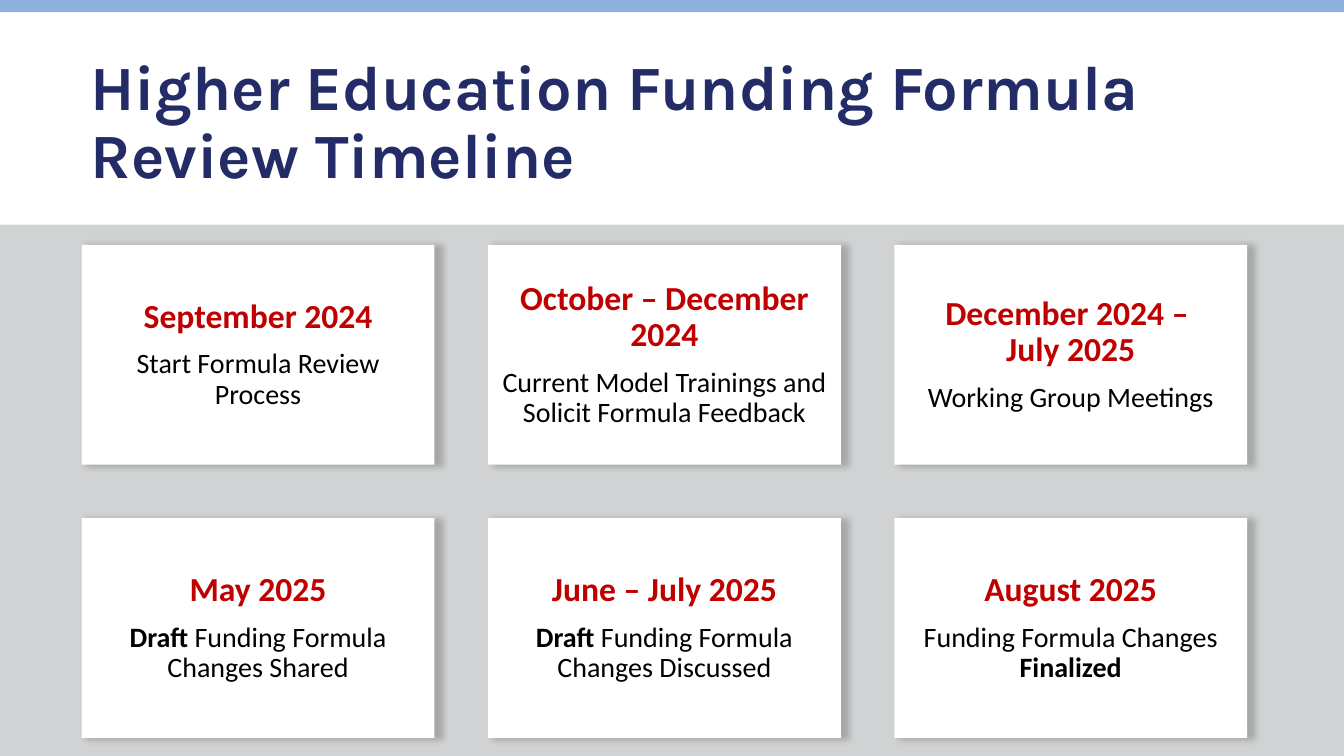
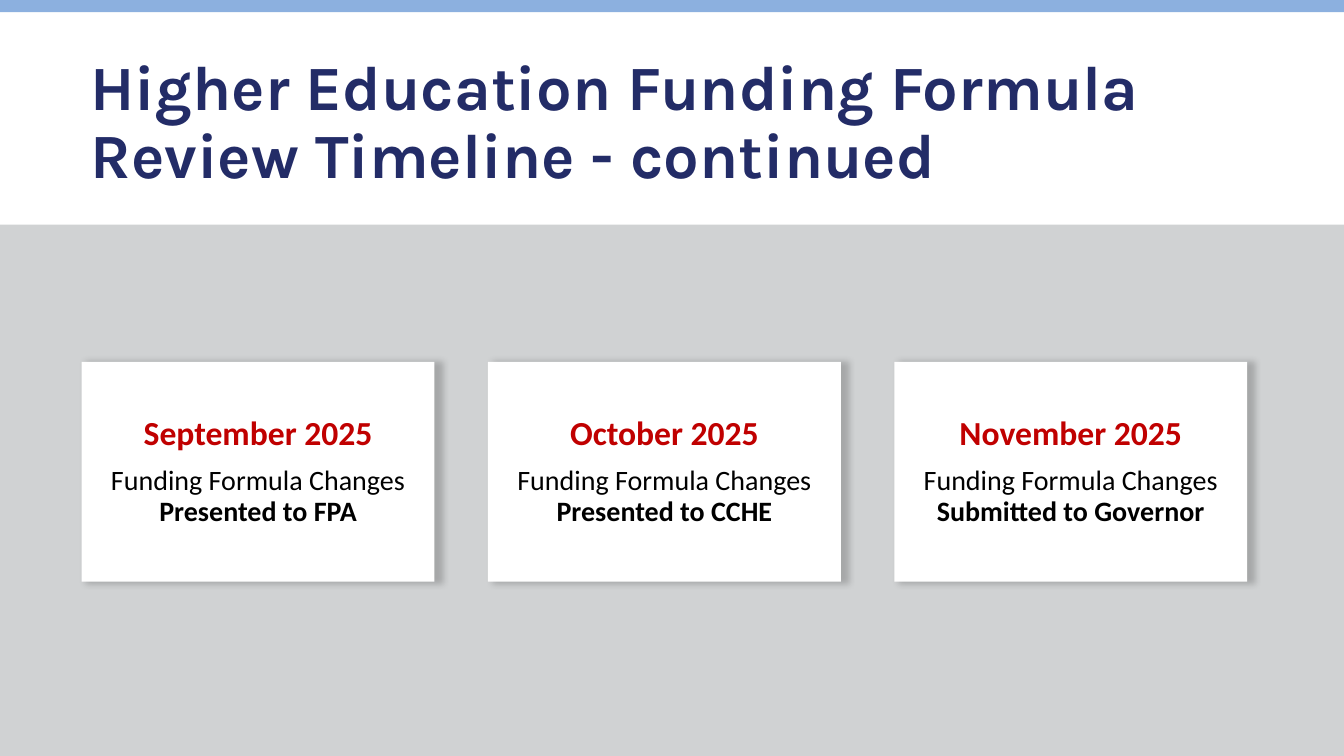
from dataclasses import dataclass

from lxml import etree
from pptx import Presentation
from pptx.dml.color import RGBColor
from pptx.enum.shapes import MSO_SHAPE
from pptx.enum.text import MSO_ANCHOR, PP_ALIGN
from pptx.oxml.ns import qn
from pptx.util import Inches, Pt

TITLE = "Higher Education Funding Formula Review Timeline"
CHANGES = "Funding Formula Changes "

SLIDES = [
    {
        "title": TITLE,
        "top": 2.43,
        "cards": [
            ("September 2024", [("Start Formula Review Process", False)]),
            ("October – December 2024",
             [("Current Model Trainings and Solicit Formula Feedback", False)]),
            ("December 2024 – \vJuly 2025", [("Working Group Meetings", False)]),
            ("May 2025", [("Draft", True), (" Funding Formula Changes Shared", False)]),
            ("June – July 2025",
             [("Draft", True), (" Funding Formula Changes Discussed", False)]),
            ("August 2025", [(CHANGES, False), ("Finalized", True)]),
        ],
    },
    {
        "title": TITLE + " - continued",
        "top": 3.59,
        "cards": [
            ("September 2025", [(CHANGES, False), ("Presented to FPA", True)]),
            ("October 2025", [(CHANGES, False), ("Presented to CCHE", True)]),
            ("November 2025", [(CHANGES, False), ("Submitted to Governor", True)]),
        ],
    },
]


@dataclass(frozen=True)
class Theme:
    stripe: str = "8CB0DF"
    panel: str = "D0D2D3"
    card: str = "FFFFFF"
    title: str = "232C67"
    date: str = "C00000"
    body: str = "000000"
    title_font: str = "Karla"
    body_font: str = "Calibri"
    title_size: int = 45
    date_size: int = 24
    body_size: int = 20


THEME = Theme()
COLUMNS = 3
CARD_LEFT, CARD_W, CARD_H = 0.81, 3.5, 2.18
PITCH_X, PITCH_Y = 4.03, 2.71


def add_rect(s, left, top, width, height, color):
    sp = s.shapes.add_shape(MSO_SHAPE.RECTANGLE, Inches(left), Inches(top),
                            Inches(width), Inches(height))
    sp.shadow.inherit = False
    sp.fill.solid()
    sp.fill.fore_color.rgb = RGBColor.from_string(color)
    sp.line.fill.background()
    return sp


def add_shadow(sp):
    effects = sp._element.spPr.find(qn("a:effectLst"))
    shadow = etree.SubElement(
        effects, qn("a:outerShdw"), blurRad=str(Pt(5)), dist=str(Pt(3)), dir="0",
        sx="101000", sy="101000", algn="tl", rotWithShape="0")
    color = etree.SubElement(shadow, qn("a:srgbClr"), val="000000")
    etree.SubElement(color, qn("a:alpha"), val="20000")


def style_run(r, font, size, color, bold):
    r.font.name = font
    r.font.size = Pt(size)
    r.font.bold = bold
    r.font.color.rgb = RGBColor.from_string(color)


def add_title(s, text):
    box = s.shapes.add_textbox(Inches(0.8), Inches(0.46), Inches(11.74), Inches(1.67))
    tf = box.text_frame
    tf.word_wrap = True
    tf.margin_top = Inches(0.1)
    p = tf.paragraphs[0]
    p.text = text
    p.line_spacing = 0.9
    style_run(p.runs[0], THEME.title_font, THEME.title_size, THEME.title, True)


def add_card(s, left, top, date, parts):
    sp = add_rect(s, left, top, CARD_W, CARD_H, THEME.card)
    add_shadow(sp)
    tf = sp.text_frame
    tf.word_wrap = True
    tf.vertical_anchor = MSO_ANCHOR.MIDDLE
    heading, detail = tf.paragraphs[0], tf.add_paragraph()
    for p in (heading, detail):
        p.alignment = PP_ALIGN.CENTER
        p.line_spacing = 0.9
    heading.text = date
    for r in heading.runs:
        style_run(r, THEME.body_font, THEME.date_size, THEME.date, True)
    detail.space_before = Pt(10)
    for text, bold in parts:
        r = detail.add_run()
        r.text = text
        style_run(r, THEME.body_font, THEME.body_size, THEME.body, bold)


def add_timeline(prs, content):
    s = prs.slides.add_slide(prs.slide_layouts[6])
    add_rect(s, -0.02, -0.03, 13.35, 0.15, THEME.stripe)
    add_rect(s, 0, 2.23, 13.33, 5.27, THEME.panel)
    add_title(s, content["title"])
    for i, (date, parts) in enumerate(content["cards"]):
        row, col = divmod(i, COLUMNS)
        add_card(s, CARD_LEFT + col * PITCH_X, content["top"] + row * PITCH_Y, date, parts)


def main():
    prs = Presentation()
    prs.slide_width, prs.slide_height = Inches(13.33), Inches(7.5)
    for content in SLIDES:
        add_timeline(prs, content)
    prs.save("out.pptx")


if __name__ == "__main__":
    main()
